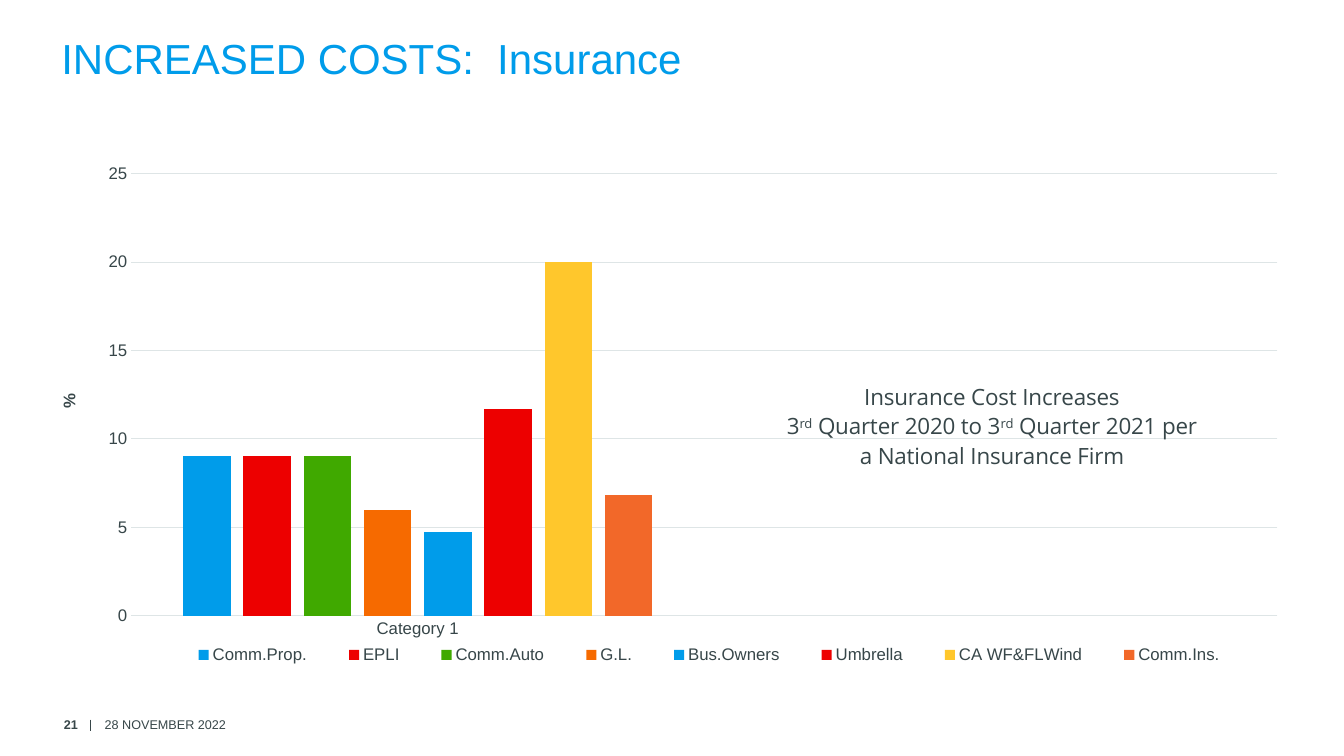
from lxml import etree
from pptx import Presentation
from pptx.chart.data import CategoryChartData as ChartData
from pptx.dml.color import RGBColor as RGB
from pptx.enum.chart import XL_CHART_TYPE as Kind, XL_LEGEND_POSITION as Legend
from pptx.enum.chart import XL_TICK_MARK as Tick
from pptx.enum.shapes import MSO_CONNECTOR as Link
from pptx.enum.text import MSO_ANCHOR as Anchor, PP_ALIGN as Align
from pptx.oxml.ns import qn
from pptx.util import Inches, Pt

# Content
TITLE = "INCREASED COSTS:  Insurance"
DATE, PAGE = "28 NOVEMBER 2022", "21"
CATS = ["Category 1", ""]
COSTS = [
    ("Comm.Prop.", 9, "009CEA"),
    ("EPLI", 9, "ED0000"),
    ("Comm.Auto", 9, "40A900"),
    ("G.L.", 6, "F66A00"),
    ("Bus.Owners", 4.7, "009CEA"),
    ("Umbrella", 11.7, "ED0000"),
    ("CA WF&FLWind", 20, "FFC72C"),
    ("Comm.Ins.", 6.8, "F26829"),
]
# Each line is a list of (text, raised) pieces
NOTE = [
    [("Insurance Cost Increases", False)],
    [("3", False), ("rd", True), (" Quarter 2020 to 3", False),
     ("rd", True), (" Quarter 2021 per", False)],
    [("a National Insurance Firm", False)],
]
THEME = {
    "ink": "374649", "blue": "009CEA", "grid": "DEE5E6",
    "font": "Arial", "note font": "Open Sans",
    "title": 30, "note": 16, "axis": 12, "foot": 9,
}


def style(font, size, color=THEME["ink"], name=THEME["font"], bold=False):
    font.size, font.name, font.bold = Pt(size), name, bold
    font.color.rgb = RGB.from_string(color)


def rule(line, color, width):
    line.color.rgb = RGB.from_string(color)
    line.width = Pt(width)


def add_text(slide, box, text, size, color=THEME["ink"], bold=False,
             align=Align.LEFT, anchor=Anchor.MIDDLE):
    frame = slide.shapes.add_textbox(*map(Inches, box)).text_frame
    frame.word_wrap = True
    frame.vertical_anchor = anchor
    frame.text = text
    para = frame.paragraphs[0]
    para.alignment = align
    style(para.runs[0].font, size, color, bold=bold)


def set_layout(node, index, inner=False, **spots):
    """Place a chart part by hand, in fractions of the chart's size."""
    for old in node.findall(qn("c:layout")):
        node.remove(old)
    layout = etree.Element(qn("c:layout"))
    manual = etree.SubElement(layout, qn("c:manualLayout"))
    parts = [("layoutTarget", "inner")] if inner else []
    parts += [("xMode", "edge"), ("yMode", "edge"), *spots.items()]
    for tag, val in parts:
        etree.SubElement(manual, qn("c:" + tag)).set("val", str(val))
    node.insert(index, layout)


def add_note(chart):
    title = chart.chart_title
    frame = title.text_frame
    for i, pieces in enumerate(NOTE):
        para = frame.add_paragraph() if i else frame.paragraphs[0]
        para.alignment = Align.CENTER
        for text, raised in pieces:
            run = para.add_run()
            run.text = text
            style(run.font, THEME["note"], name=THEME["note font"])
            if raised:
                run._r.get_or_add_rPr().set("baseline", "30000")
    node = title._element
    set_layout(node, 1, x=0.59, y=0.41)
    for old in node.findall(qn("c:overlay")):
        node.remove(old)
    over = etree.Element(qn("c:overlay"))
    over.set("val", "1")
    node.insert(2, over)


def add_costs(slide):
    data = ChartData()
    data.categories = CATS
    for name, cost, _ in COSTS:
        data.add_series(name, [cost, None])
    box = map(Inches, (0.5, 1.61, 12.33, 5.2))
    chart = slide.shapes.add_chart(Kind.COLUMN_CLUSTERED, *box, data).chart
    style(chart.font, THEME["axis"])

    # Bars
    plot = chart.plots[0]
    plot.gap_width, plot.overlap = 219, -27
    plot.vary_by_categories = False
    for bar, (_, _, color) in zip(plot.series, COSTS):
        bar.format.fill.solid()
        bar.format.fill.fore_color.rgb = RGB.from_string(color)
        bar.invert_if_negative = False

    # Axes
    cat, val = chart.category_axis, chart.value_axis
    for axis in (cat, val):
        axis.major_tick_mark = axis.minor_tick_mark = Tick.NONE
        style(axis.tick_labels.font, THEME["axis"])
    rule(cat.format.line, THEME["grid"], 0.75)
    val.format.line.fill.background()
    rule(val.major_gridlines.format.line, THEME["grid"], 0.75)
    val.minimum_scale, val.maximum_scale, val.major_unit = 0, 25, 5
    frame = val.axis_title.text_frame
    frame.text = "%"
    style(frame.paragraphs[0].runs[0].font, THEME["axis"], bold=True)
    turn = frame._txBody.find(qn("a:bodyPr"))
    turn.set("rot", "-5400000")
    turn.set("vert", "horz")

    # Legend, plot area and note
    chart.has_legend = True
    legend = chart.legend
    legend.position = Legend.BOTTOM
    legend.include_in_layout = False
    style(legend.font, THEME["axis"])
    set_layout(legend._element, 1, x=0.09, y=0.91, w=0.88, h=0.06)
    area = chart._chartSpace.find(".//" + qn("c:plotArea"))
    set_layout(area, 0, True, x=0.065, y=0.022, w=0.922, h=0.843)
    add_note(chart)


def add_foot(slide):
    x = Inches(0.9)
    bar = slide.shapes.add_connector(
        Link.STRAIGHT, x, Inches(7.14), x, Inches(7.25))
    rule(bar.line, THEME["ink"], 1)
    etree.SubElement(bar._element.spPr, qn("a:effectLst"))
    add_text(slide, (0.94, 7.05, 3.94, 0.28), DATE, THEME["foot"])
    add_text(slide, (0.24, 7.05, 0.63, 0.28), PAGE, THEME["foot"],
             bold=True, align=Align.RIGHT)


def main():
    deck = Presentation()
    deck.slide_width, deck.slide_height = Inches(13.33), Inches(7.5)
    slide = deck.slides.add_slide(deck.slide_layouts[6])
    add_text(slide, (0.51, 0.27, 10.91, 1.1), TITLE, THEME["title"],
             THEME["blue"], anchor=Anchor.TOP)
    add_costs(slide)
    add_foot(slide)
    deck.save("out.pptx")


if __name__ == "__main__":
    main()
